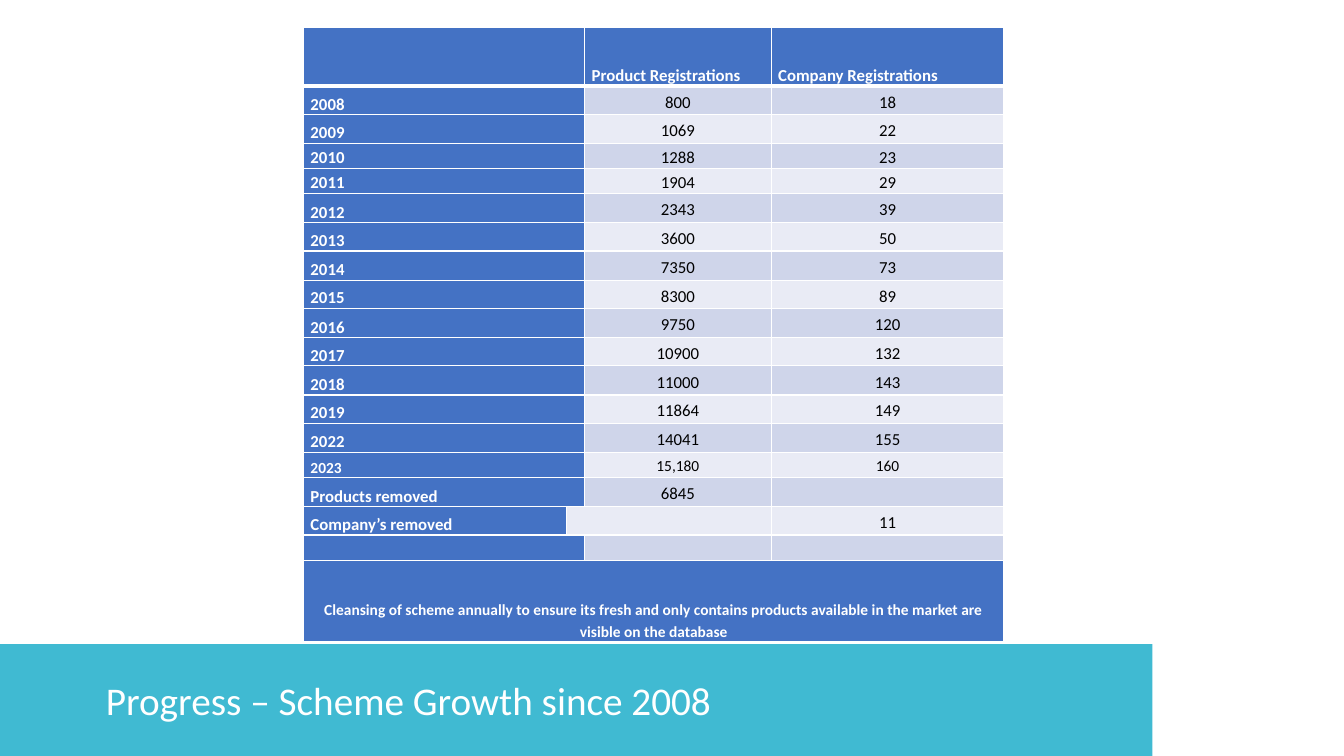
from dataclasses import dataclass

from lxml.etree import SubElement
from pptx import Presentation
from pptx.dml.color import RGBColor as Rgb
from pptx.enum.shapes import MSO_SHAPE as Shape
from pptx.enum.text import MSO_ANCHOR as Anchor, MSO_AUTO_SIZE as Auto, PP_ALIGN as Align
from pptx.oxml.ns import qn
from pptx.slide import Slide
from pptx.table import Table, _Cell as Cell
from pptx.util import Inches, Pt

HUES = {
    "band": "40BAD2",
    "head": "4472C4",
    "odd": "CFD5EA",
    "even": "E9EBF5",
    "white": "FFFFFF",
    "black": "000000",
}
FONT = "Calibri"
COLS = [2.61, 0.17, 1.85, 2.31]
TALL = (0.28, 0.29)


@dataclass
class Row:
    label: str = ""
    goods: str = ""
    firms: str = ""
    high: float = 0.0
    size: int = 12
    lead: float = 1.15
    span: tuple[int, int] = (0, 1)


ROWS = [
    Row("", "Product Registrations", "Company Registrations", 0.58),
    Row("2008", "800", "18"),
    Row("2009", "1069", "22"),
    Row("2010", "1288", "23", 0.25),
    Row("2011", "1904", "29", 0.25),
    Row("2012", "2343", "39"),
    Row("2013", "3600", "50"),
    Row("2014", "7350", "73"),
    Row("2015", "8300", "89"),
    Row("2016", "9750", "120"),
    Row("2017", "10900", "132"),
    Row("2018", "11000", "143"),
    Row("2019", "11864", "149"),
    Row("2022", "14041", "155"),
    Row("2023", "15,180", "160", 0.25, 11, 1.07),
    Row("Products removed", "6845"),
    Row("Company’s removed", "", "11", span=(1, 2)),
    Row(high=0.25),
    Row(
        "Cleansing of scheme annually to ensure its fresh and only contains "
        "products available in the market are visible on the database",
        high=0.81, size=11, span=(0, 3),
    ),
]
LAST = len(ROWS) - 1


def color(name: str) -> Rgb:
    return Rgb.from_string(HUES[name])


def edge(cell: Cell, side: str, width: float) -> None:
    props = cell._tc.get_or_add_tcPr()
    line = SubElement(props, qn(f"a:ln{side}"), w=str(Pt(width)))
    fill = SubElement(line, qn("a:solidFill"))
    SubElement(fill, qn("a:srgbClr"), val=HUES["white"])


def style(cell: Cell, text: str, row: Row, top: int, col: int) -> None:
    head = top == 0
    label = head or col < row.span[0] or col == 0
    for side in "LRTB":
        thick = (head and side == "B") or (top == 1 and side == "T")
        edge(cell, side, 3 if thick else 1)
    cell.fill.solid()
    shade = "head" if label else ("odd" if top % 2 else "even")
    cell.fill.fore_color.rgb = color(shade)
    cell.margin_left = cell.margin_right = Inches(0.07)
    cell.margin_top, cell.margin_bottom = Inches(0.01), 0
    cell.vertical_anchor = Anchor.BOTTOM if label else Anchor.MIDDLE
    para = cell.text_frame.paragraphs[0]
    para.line_spacing = row.lead
    left = label and top != LAST
    para.alignment = Align.LEFT if left else Align.CENTER
    if not text:
        SubElement(para._p, qn("a:endParaRPr"), sz=str(row.size * 100))
        return
    para.text = text
    font = para.runs[0].font
    font.name, font.size, font.bold = FONT, Pt(row.size), label
    font.color.rgb = color("white" if label else "black")


def fill_row(table: Table, top: int, row: Row) -> None:
    table.rows[top].height = Inches(row.high or TALL[top % 2])
    texts = [row.label, "", row.goods, row.firms]
    for col, text in enumerate(texts):
        style(table.cell(top, col), text, row, top, col)
    start, end = row.span
    table.cell(top, start).merge(table.cell(top, end))


def add_grid(slide: Slide) -> None:
    frame = slide.shapes.add_table(
        len(ROWS), len(COLS), Inches(3.01), Inches(0.27), Inches(6.95), Inches(6.11)
    )
    table = frame.table
    table.first_row = table.horz_banding = False
    for col, width in zip(table.columns, COLS):
        col.width = Inches(width)
    for top, row in enumerate(ROWS):
        fill_row(table, top, row)


def add_title(slide: Slide) -> None:
    band = slide.shapes.add_shape(
        Shape.RECTANGLE, 0, Inches(6.39), Inches(11.43), Inches(1.11)
    )
    band.shadow.inherit = False
    band.fill.solid()
    band.fill.fore_color.rgb = color("band")
    band.line.fill.background()
    title = slide.shapes.title
    band.element.addnext(title.element)
    title.left, title.top = Inches(0.95), Inches(6.66)
    title.width, title.height = Inches(10.18), Inches(0.57)
    frame = title.text_frame
    frame.text = "Progress – Scheme Growth since 2008"
    frame.word_wrap = True
    frame.auto_size = Auto.SHAPE_TO_FIT_TEXT
    frame.vertical_anchor = Anchor.TOP
    para = frame.paragraphs[0]
    para.alignment = Align.LEFT
    font = para.runs[0].font
    font.name, font.size = FONT, Pt(28)
    font.color.rgb = color("white")


def main() -> None:
    deck = Presentation()
    deck.slide_width, deck.slide_height = Inches(13.33), Inches(7.5)
    slide = deck.slides.add_slide(deck.slide_layouts[5])
    add_title(slide)
    add_grid(slide)
    deck.save("out.pptx")


if __name__ == "__main__":
    main()
